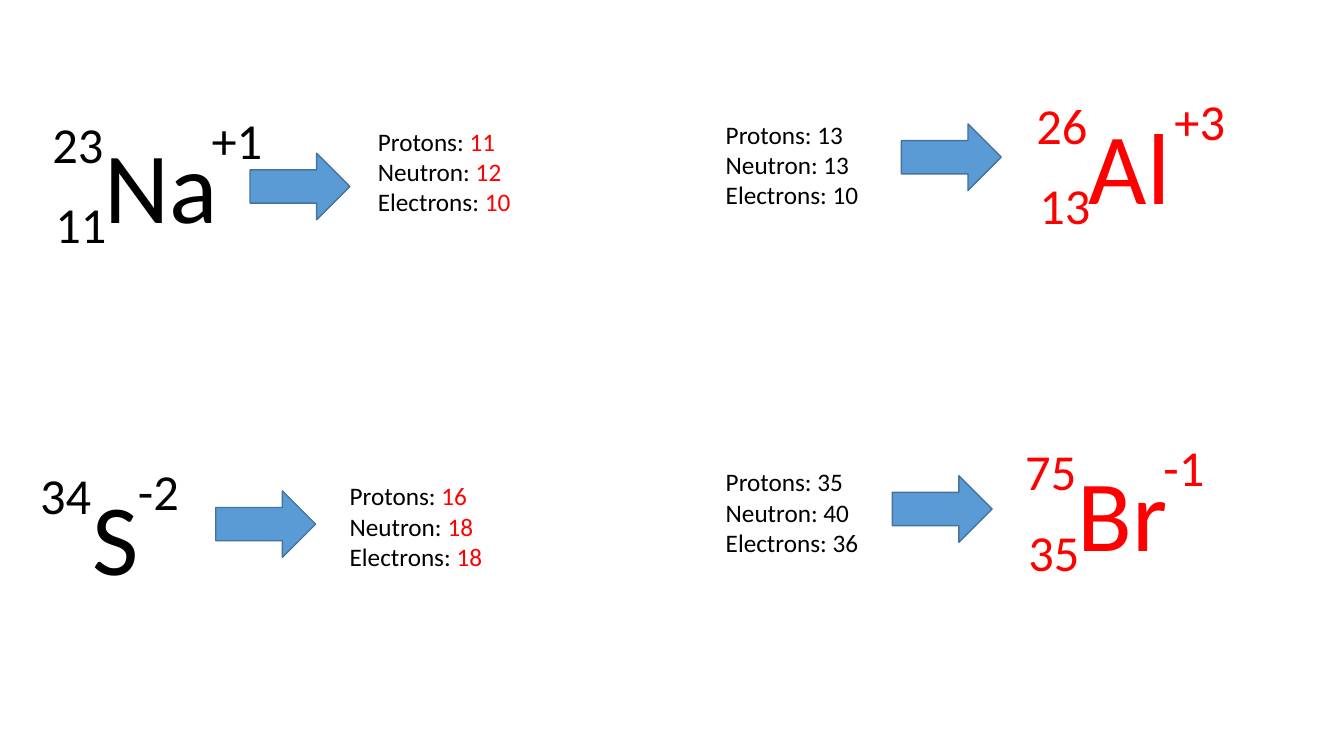
from pptx import Presentation
from pptx.dml.color import RGBColor
from pptx.enum.shapes import MSO_SHAPE
from pptx.enum.text import MSO_AUTO_SIZE
from pptx.util import Inches, Pt

FONT = "Calibri"
COLORS = {"black": "000000", "red": "FF0000", "blue": "5B9BD5", "edge": "43739E"}
LABELS = ("Protons: ", "Neutron: ", "Electrons: ")

# Each ion: symbol, mass, atomic number, charge, symbol box (left, top, width),
# charge offset and width, symbol colour
# then particle counts, their place and colour, and the arrow's place
IONS = [
    {"ion": ("Na", "23", "11", "+1"), "box": (0.94, 1.17, 1.34),
     "charge": (1.06, 0.71), "color": "black",
     "counts": ("11", "12", "10"), "list": (3.65, 1.2), "answer": "red",
     "arrow": (2.48, 1.52)},
    {"ion": ("Al", "26", "13", "+3"), "box": (10.7, 0.98, 1.02),
     "charge": (0.85, 0.71), "color": "red",
     "counts": ("13", "13", "10"), "list": (7.1, 1.13), "answer": "black",
     "arrow": (8.94, 1.23)},
    {"ion": ("S", "34", "", "-2"), "box": (0.82, 4.66, 0.67),
     "charge": (0.45, 0.61), "color": "black",
     "counts": ("16", "18", "18"), "list": (3.37, 4.72), "answer": "red",
     "arrow": (2.14, 4.87)},
    {"ion": ("Br", "75", "35", "-1"), "box": (10.59, 4.42, 1.1),
     "charge": (0.85, 0.61), "color": "red",
     "counts": ("35", "40", "36"), "list": (7.1, 4.58), "answer": "black",
     "arrow": (8.85, 4.72)},
]


def rgb(name):
    return RGBColor.from_string(COLORS[name])


def add_text(shapes, box, lines, size):
    """Each line is a list of (text, colour) runs."""
    shape = shapes.add_textbox(*map(Inches, box))
    frame = shape.text_frame
    frame.word_wrap = False
    frame.auto_size = MSO_AUTO_SIZE.SHAPE_TO_FIT_TEXT
    for i, runs in enumerate(lines):
        para = frame.add_paragraph() if i else frame.paragraphs[0]
        for text, color in runs:
            run = para.add_run()
            run.text = text
            run.font.name = FONT
            run.font.size = Pt(size)
            run.font.color.rgb = rgb(color)


def add_ion(shapes, item):
    symbol, mass, number, charge = item["ion"]
    left, top, width = item["box"]
    shift, wide = item["charge"]
    parts = [
        (symbol, 0, 0, width, 1.31, 72),
        (mass, -0.52, -0.1, 0.71, 0.71, 36),
        (number, -0.49, 0.7, 0.71, 0.71, 36),
        (charge, shift, -0.14, wide, 0.71, 36),
    ]
    group = shapes.add_group_shape()
    for text, dx, dy, w, h, size in parts:
        if text:
            add_text(group.shapes, (left + dx, top + dy, w, h),
                     [[(text, item["color"])]], size)


def add_arrow(shapes, place):
    arrow = shapes.add_shape(MSO_SHAPE.RIGHT_ARROW,
                             *map(Inches, (*place, 0.99, 0.66)))
    arrow.shadow.inherit = False
    arrow.fill.solid()
    arrow.fill.fore_color.rgb = rgb("blue")
    arrow.line.color.rgb = rgb("edge")
    arrow.line.width = Pt(1)


def main():
    deck = Presentation()
    deck.slide_width, deck.slide_height = Inches(13.33), Inches(7.5)
    shapes = deck.slides.add_slide(deck.slide_layouts[6]).shapes

    # Ion symbol, particle list and arrow for each exercise
    for item in IONS:
        add_ion(shapes, item)
        lines = [[(label, "black"), (count, item["answer"])]
                 for label, count in zip(LABELS, item["counts"])]
        add_text(shapes, (*item["list"], 1.53, 1.01), lines, 18)
        add_arrow(shapes, item["arrow"])

    deck.save("out.pptx")


if __name__ == "__main__":
    main()
